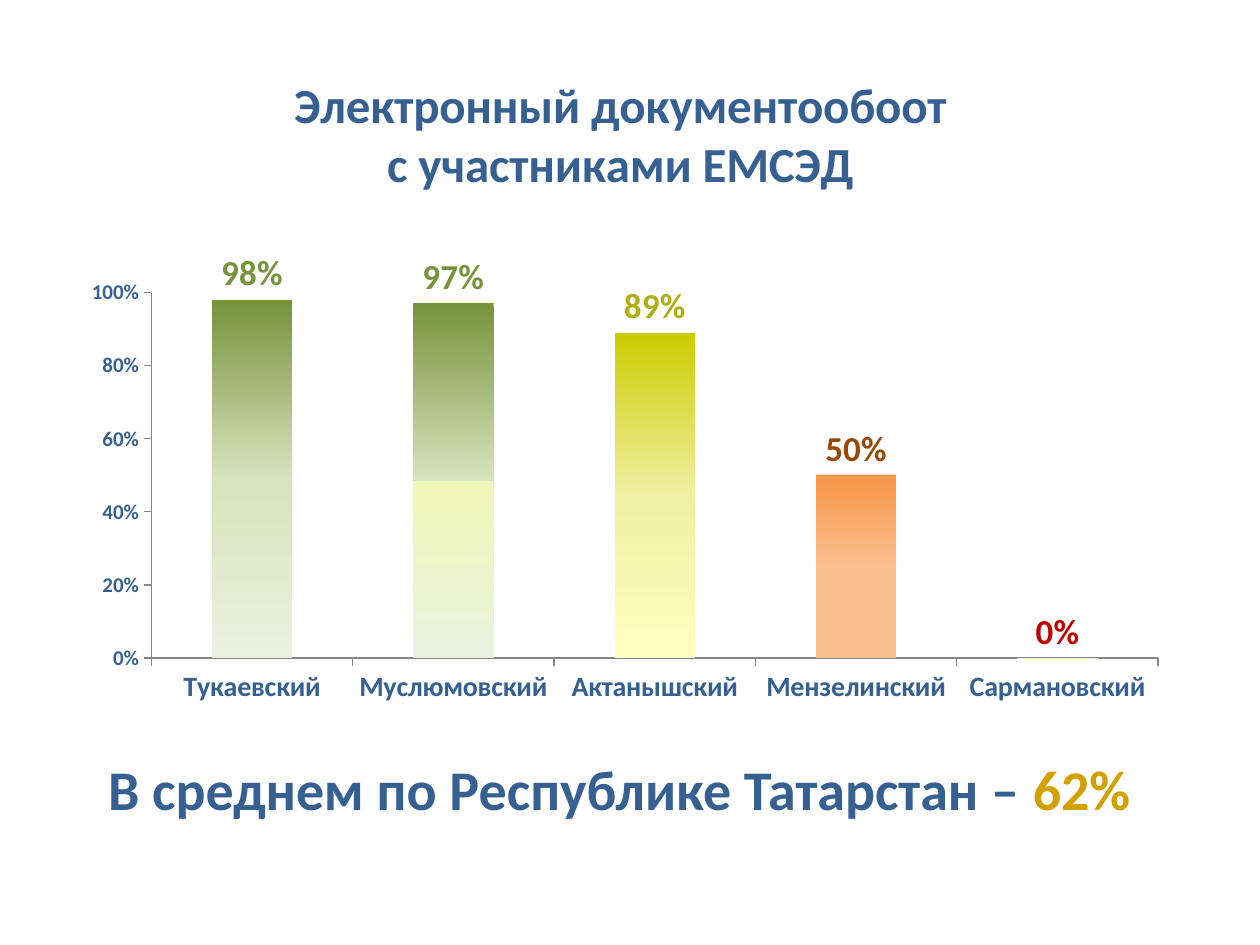
from lxml import etree
from pptx import Presentation
from pptx.chart import data as chart_data
from pptx.dml import color as dml
from pptx.enum import chart as charts, text
from pptx.oxml import ns
from pptx.util import Cm, Pt

FONT = "Calibri"
COLORS = {"blue": "376092", "gold": "D2A000", "axis": "868686", "series": "4F81BD"}
DISTRICTS = [
    ("Тукаевский", 0.98, "77933C", [(0, "77933C"), (50, "D7E4BD"), (100, "EBF1DE")]),
    ("Муслюмовский", 0.97, "77933C",
     [(0, "77933C"), (50, "D7E4BD"), (50, "EFF8B8"), (100, "EBF1DE")]),
    ("Актанышский", 0.89, "AFAF10", [(0, "CCCC00"), (50, "F0F0A2"), (100, "FFFFC2")]),
    ("Мензелинский", 0.5, "984807", [(0, "F79646"), (50, "FAC090")]),
    ("Сармановский", 0, "C00000", [(0, "D9D915"), (50, "EFF8B8"), (100, "FBFED8")]),
]


def rgb(value):
    return dml.RGBColor.from_string(value)


def style_font(font, size, color):
    font.name = FONT
    font.size = Pt(size)
    font.bold = True
    font.color.rgb = rgb(color)


def add_run(paragraph, content, size, color):
    run = paragraph.add_run()
    run.text = content
    style_font(run.font, size, color)


def place(parent, index, **values):
    for old in parent.findall(ns.qn("c:layout")):
        parent.remove(old)
    layout = etree.Element(ns.qn("c:layout"))
    manual = etree.SubElement(layout, ns.qn("c:manualLayout"))
    for tag, value in values.items():
        etree.SubElement(manual, ns.qn(f"c:{tag}")).set("val", str(value))
    parent.insert(index, layout)


def set_gradient(series, point, stops):
    fill = point.format.fill
    fill.gradient()
    fill.gradient_angle = 270
    stop_list = list(series._element.iter(ns.qn("a:gsLst")))[-1]
    for old in list(stop_list):
        stop_list.remove(old)
    for percent, color in stops:
        stop = etree.SubElement(stop_list, ns.qn("a:gs"), pos=str(percent * 1000))
        etree.SubElement(stop, ns.qn("a:srgbClr"), val=color)


def style_axis(axis, size):
    axis.has_major_gridlines = False
    axis.major_tick_mark = charts.XL_TICK_MARK.OUTSIDE
    axis.minor_tick_mark = charts.XL_TICK_MARK.NONE
    axis.format.line.color.rgb = rgb(COLORS["axis"])
    axis.format.line.width = Pt(0.75)
    style_font(axis.tick_labels.font, size, COLORS["blue"])


def add_title(chart):
    chart.has_title = True
    title = chart.chart_title
    title.include_in_layout = False
    frame = title.text_frame
    for index, line in enumerate(["Электронный документообоот", "с участниками ЕМСЭД"]):
        paragraph = frame.add_paragraph() if index else frame.paragraphs[0]
        paragraph.alignment = text.PP_ALIGN.CENTER
        add_run(paragraph, line, 28, COLORS["blue"])
    place(title._element, 1, xMode="edge", yMode="edge", x=0.21, y=0.03)


def style_series(plot):
    plot.gap_width = 150
    plot.vary_by_categories = False
    series = plot.series[0]
    series.format.fill.solid()
    series.format.fill.fore_color.rgb = rgb(COLORS["series"])
    for index, (_, _, label_color, stops) in enumerate(DISTRICTS):
        point = series.points[index]
        set_gradient(series, point, stops)
        style_font(point.data_label.font, 20, label_color)
        point.data_label.position = charts.XL_LABEL_POSITION.OUTSIDE_END
    labels = series.data_labels
    labels.show_value = True
    labels.number_format = "0%"
    labels.number_format_is_linked = False
    labels.position = charts.XL_LABEL_POSITION.OUTSIDE_END
    style_font(labels.font, 20, COLORS["blue"])


def add_district_chart(slide):
    values = chart_data.CategoryChartData(number_format="0%")
    values.categories = [district[0] for district in DISTRICTS]
    values.add_series("Series 1", [district[1] for district in DISTRICTS])
    chart = slide.shapes.add_chart(
        charts.XL_CHART_TYPE.COLUMN_CLUSTERED,
        Cm(1.07), Cm(0.94), Cm(22.78), Cm(16.64), values).chart
    chart.font.name = FONT
    chart.font.size = Pt(10)
    chart.has_legend = False
    add_title(chart)
    style_axis(chart.category_axis, 16)
    axis = chart.value_axis
    style_axis(axis, 12)
    axis.minimum_scale, axis.maximum_scale, axis.major_unit = 0, 1, 0.2
    axis.tick_labels.number_format = "0%"
    axis.tick_labels.number_format_is_linked = False
    style_series(chart.plots[0])
    plot_area = chart._chartSpace.find(".//" + ns.qn("c:plotArea"))
    place(plot_area, 0, layoutTarget="inner", xMode="edge", yMode="edge",
          x=0.087, y=0.298, w=0.891, h=0.443)


def add_average(slide):
    frame = slide.shapes.add_textbox(Cm(1.9), Cm(15.09), Cm(21.17), Cm(1.62)).text_frame
    frame.word_wrap = True
    frame.auto_size = text.MSO_AUTO_SIZE.SHAPE_TO_FIT_TEXT
    paragraph = frame.paragraphs[0]
    paragraph.alignment = text.PP_ALIGN.CENTER
    add_run(paragraph, "В среднем по Республике Татарстан – ", 32, COLORS["blue"])
    add_run(paragraph, "62%", 32, COLORS["gold"])


def main():
    presentation = Presentation()
    presentation.slide_width = Cm(25.4)
    presentation.slide_height = Cm(19.05)
    slide = presentation.slides.add_slide(presentation.slide_layouts[6])
    add_average(slide)
    add_district_chart(slide)
    presentation.save("out.pptx")


if __name__ == "__main__":
    main()
